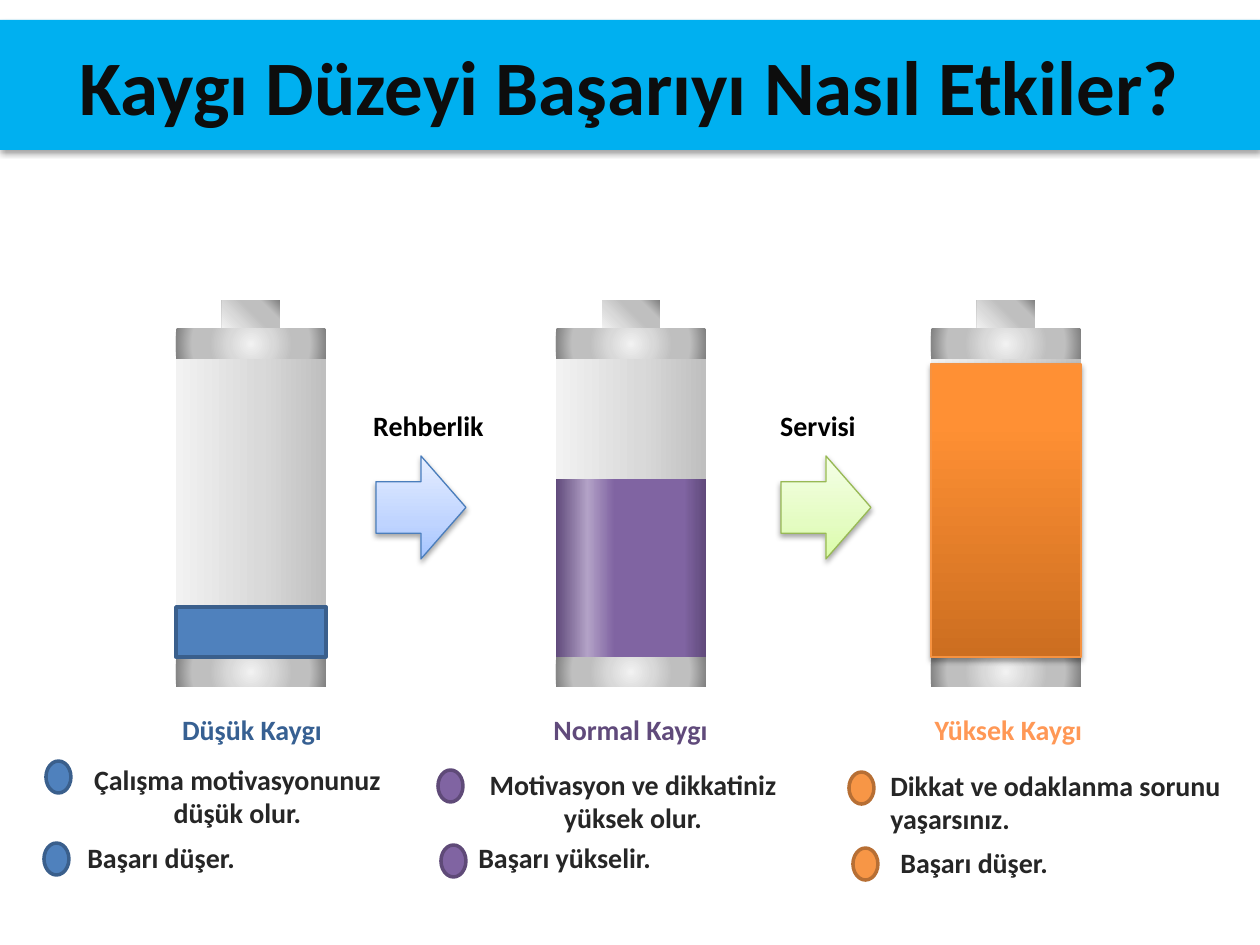
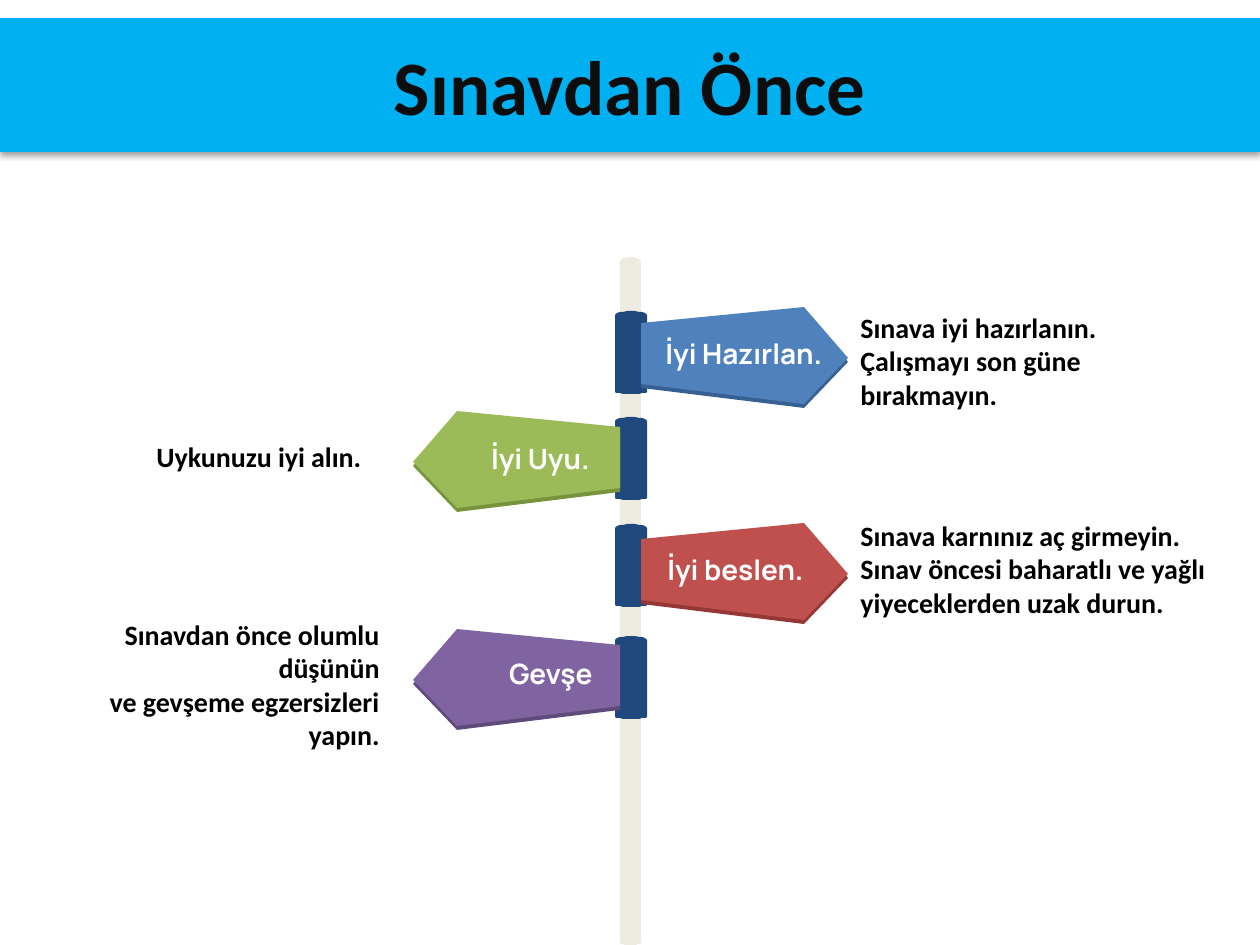
import math

from lxml import etree
from pptx import Presentation
from pptx.dml.color import RGBColor
from pptx.enum.shapes import MSO_SHAPE
from pptx.enum.text import MSO_ANCHOR, MSO_AUTO_SIZE, PP_ALIGN
from pptx.oxml.ns import qn
from pptx.util import Pt

PX = 914400 / 126
RECTANGLE, ELLIPSE, ARROW = MSO_SHAPE.RECTANGLE, MSO_SHAPE.OVAL, MSO_SHAPE.RIGHT_ARROW
LEFT, CENTER, RIGHT = PP_ALIGN.LEFT, PP_ALIGN.CENTER, PP_ALIGN.RIGHT

BAND = RGBColor(0x00, 0xB0, 0xF0)
TITLE_INK = RGBColor(0x0D, 0x0D, 0x0D)
NOTE_INK = RGBColor(0x26, 0x26, 0x26)
BLACK = RGBColor(0, 0, 0)
WHITE = RGBColor(0xFF, 0xFF, 0xFF)
BLUE = RGBColor(0x4F, 0x81, 0xBD)
BLUE_DARK = RGBColor(0x37, 0x60, 0x92)
BLUE_LINE = RGBColor(0x3A, 0x5F, 0x8C)
PURPLE = RGBColor(0x80, 0x64, 0xA2)
PURPLE_DARK = RGBColor(0x60, 0x4A, 0x7B)
PURPLE_LINE = RGBColor(0x5F, 0x4A, 0x78)
ORANGE = RGBColor(0xF7, 0x96, 0x46)
ORANGE_TEXT = RGBColor(0xFF, 0x98, 0x56)
ORANGE_LINE = RGBColor(0xB7, 0x6F, 0x34)
ORANGE_EDGE = RGBColor(0xF6, 0x92, 0x40)
GREEN = RGBColor(0x9B, 0xBB, 0x59)
GREEN_DARK = RGBColor(0x77, 0x93, 0x3C)
RED = RGBColor(0xC0, 0x50, 0x4D)
RED_DARK = RGBColor(0x95, 0x37, 0x35)
ARROW_BLUE_LINE = RGBColor(0x4B, 0x7E, 0xBC)
ARROW_GREEN_LINE = RGBColor(0x98, 0xB9, 0x55)
POST = RGBColor(0xEE, 0xEC, 0xE1)
SLEEVE = RGBColor(0x1F, 0x49, 0x7D)

# A gradient is its stops, then an angle in degrees or the focus of a circle (l, t, r, b).
METAL_STOPS = [(0, "F2F2F2"), (29, "D9D9D9"), (55, "BFBFBF"), (77, "BFBFBF"), (100, "808080")]
METAL = (METAL_STOPS, (50, 50, 50, 50))
METAL_KNOB = (METAL_STOPS, (0, 100, 100, 0))
GLASS = ([(0, "F2F2F2"), (57, "D9D9D9"), (100, "BFBFBF")], 0)
PURPLE_CHARGE = ([(0, "604A7B"), (21, "B3A2C7"), (39, "8064A2"), (85, "8064A2"),
                  (100, "604A7B")], 0)
ORANGE_CHARGE = ([(0, "CC6E20"), (80, "FF9034"), (100, "FF9136")], 270)
ARROW_BLUE = ([(0, "A4C4FF"), (35, "BFD4FF"), (100, "E6EEFF")], 270)
ARROW_GREEN = ([(0, "DAFDA7"), (35, "E4FCC2"), (100, "F5FFE7")], 270)

ANXIETY_TITLE = ("Kaygı Düzeyi Başarıyı Nasıl Etkiler?", 20, 130)
# Notes: text, box (left, top, width, height), alignment, bullet position.
LEVELS = [
    dict(name="Düşük Kaygı", name_box=(168, 706, 168, 47), ink=BLUE_DARK, left=176,
         charge_top=607, charge=BLUE, edge=(BLUE_LINE, 2), shadow=False,
         bullet=(BLUE, BLUE_LINE),
         notes=[("Çalışma motivasyonunuz düşük olur.", (68, 756, 339, 81), CENTER, (46, 761)),
                ("Başarı düşer.", (75, 834, 339, 47), LEFT, (44, 843))]),
    dict(name="Normal Kaygı", name_box=(540, 706, 181, 47), ink=PURPLE_DARK, left=556,
         charge_top=479, charge=PURPLE_CHARGE, edge=None, shadow=False,
         bullet=(PURPLE, PURPLE_LINE),
         notes=[("Motivasyon ve dikkatiniz yüksek olur.", (447, 761, 372, 81), CENTER, (438, 770)),
                ("Başarı yükselir.", (466, 834, 339, 47), LEFT, (441, 845))]),
    dict(name="Yüksek Kaygı", name_box=(921, 706, 175, 47), ink=ORANGE_TEXT, left=931,
         charge_top=364, charge=ORANGE_CHARGE, edge=(ORANGE_EDGE, 0.75), shadow=True,
         bullet=(ORANGE, ORANGE_LINE),
         notes=[("Dikkat ve odaklanma sorunu yaşarsınız.", (878, 762, 365, 81), LEFT, (849, 772)),
                ("Başarı düşer.", (888, 839, 372, 47), LEFT, (853, 848))]),
]
ARROWS = [("Rehberlik", (360, 402, 137, 47), 376, ARROW_BLUE, ARROW_BLUE_LINE),
          ("Servisi", (767, 402, 102, 47), 781, ARROW_GREEN, ARROW_GREEN_LINE)]

EXAM_TITLE = ("Sınavdan Önce", 18, 134)
# Sign: label, label box, points left, top, face, edge, sleeve top.
SIGNS = [
    ("İyi Hazırlan.", (653, 330, 183, 47), False, 307, BLUE, BLUE_DARK, 311),
    ("İyi Uyu.", (476, 435, 126, 47), True, 411, GREEN, GREEN_DARK, 417),
    ("İyi beslen.", (655, 546, 163, 47), False, 523, RED, RED_DARK, 524),
    ("Gevşe", (494, 650, 111, 47), True, 629, PURPLE, PURPLE_DARK, 636),
]
# Advice: paragraphs, box, alignment, wrapping.
ADVICE = [
    (["Sınava iyi hazırlanın. Çalışmayı son güne bırakmayın."], (848, 304, 373, 115), LEFT, True),
    (["Uykunuzu iyi alın."], (144, 433, 233, 47), LEFT, False),
    (["Sınava karnınız aç girmeyin.", "Sınav öncesi baharatlı ve yağlı",
      "yiyeceklerden uzak durun."], (848, 512, 412, 115), LEFT, True),
    (["Sınavdan önce olumlu düşünün", "ve gevşeme egzersizleri yapın."],
     (25, 611, 367, 149), RIGHT, True),
]
SIGN_FACE = [(804, 0), (641, 16), (641, 77), (804, 97), (848, 51)]
MIRROR = 1261
EDGE_DEPTH = 4


def emu(*lengths):
    return [round(length * PX) for length in lengths]


def set_gradient(shape, stops, direction):
    shape.fill.solid()
    solid = shape.fill._xPr.find(qn("a:solidFill"))
    gradient = etree.Element(qn("a:gradFill"), rotWithShape="1")
    stop_list = etree.SubElement(gradient, qn("a:gsLst"))
    for position, color in stops:
        stop = etree.SubElement(stop_list, qn("a:gs"), pos=str(position * 1000))
        etree.SubElement(stop, qn("a:srgbClr"), val=color)
    if isinstance(direction, tuple):
        circle = etree.SubElement(gradient, qn("a:path"))
        circle.set("path", "circle")
        focus = {side: str(value * 1000) for side, value in zip("ltrb", direction)}
        etree.SubElement(circle, qn("a:fillToRect"), focus)
    else:
        etree.SubElement(gradient, qn("a:lin"), ang=str(direction * 60000), scaled="0")
    solid.getparent().replace(solid, gradient)


def style(shape, fill, edge=None, shadow=False):
    """Set fill (colour or gradient), edge (colour, points) and the soft shadow below."""
    if isinstance(fill, RGBColor):
        shape.fill.solid()
        shape.fill.fore_color.rgb = fill
    else:
        set_gradient(shape, *fill)
    if edge:
        shape.line.color.rgb = edge[0]
        shape.line.width = Pt(edge[1])
    else:
        shape.line.fill.background()
    shape.shadow.inherit = False
    if shadow:
        effects = shape._element.spPr.find(qn("a:effectLst"))
        outer = etree.SubElement(effects, qn("a:outerShdw"), blurRad="40000", dist="23000",
                                 dir="5400000", rotWithShape="0")
        color = etree.SubElement(outer, qn("a:srgbClr"), val="000000")
        etree.SubElement(color, qn("a:alpha"), val="35000")


def add_part(slide, kind, box, fill, edge=None, shadow=False):
    style(slide.shapes.add_shape(kind, *emu(*box)), fill, edge, shadow)


def add_outline(slide, points, fill):
    builder = slide.shapes.build_freeform(*points[0], scale=PX)
    builder.add_line_segments(points[1:], close=True)
    style(builder.convert_to_shape(), fill)


def set_font(paragraph, size, color, name="Calibri"):
    font = paragraph.font
    font.name, font.size, font.bold = name, Pt(size), True
    font.color.rgb = color


def add_text(slide, lines, box, color, align=LEFT, wrap=True, font="Calibri"):
    frame = slide.shapes.add_textbox(*emu(*box)).text_frame
    frame.word_wrap = wrap
    frame.text = "\n".join(lines)
    for paragraph in frame.paragraphs:
        paragraph.alignment = align
        set_font(paragraph, 16, color, font)


def add_titled_slide(presentation, text, top, height):
    slide = presentation.slides.add_slide(presentation.slide_layouts[5])
    title = slide.shapes.title
    title.left, title.top, title.width, title.height = emu(0, top, 1260, height)
    style(title, BAND, shadow=True)
    frame = title.text_frame
    frame.text = text
    frame.auto_size = MSO_AUTO_SIZE.NONE
    frame.vertical_anchor = MSO_ANCHOR.MIDDLE
    frame.paragraphs[0].alignment = CENTER
    set_font(frame.paragraphs[0], 44, TITLE_INK)
    return slide


def add_battery(slide, level):
    left, top, bottom = level["left"], 329, 687
    cap, width = 30, 150
    add_part(slide, RECTANGLE, (left, top, width, bottom - top), GLASS)
    add_part(slide, RECTANGLE, (left + 46, top - 29, 58, 29), METAL_KNOB)
    for cap_top in (top, bottom - cap):
        add_part(slide, RECTANGLE, (left, cap_top, width, cap), METAL)
    charge_top = level["charge_top"]
    add_part(slide, RECTANGLE, (left, charge_top, width, bottom - cap - charge_top),
             level["charge"], level["edge"], level["shadow"])


def build_anxiety_slide(presentation):
    slide = add_titled_slide(presentation, *ANXIETY_TITLE)
    for level in LEVELS:
        add_battery(slide, level)
        add_text(slide, [level["name"]], level["name_box"], level["ink"], CENTER, wrap=False)
        fill, line = level["bullet"]
        for text, box, align, bullet_at in level["notes"]:
            add_part(slide, ELLIPSE, (*bullet_at, 25, 32), fill, (line, 2))
            add_text(slide, [text], box, NOTE_INK, align)
    for text, box, left, fill, line in ARROWS:
        add_part(slide, ARROW, (left, 456, 90, 103), fill, (line, 0.75), shadow=True)
        add_text(slide, [text], box, BLACK, CENTER, wrap=False)


def add_column(slide, left, right, top, bottom, top_bulge, bottom_bulge, fill):
    """Draw an upright column whose two ends are shallow arcs."""
    middle, radius = (left + right) / 2, (right - left) / 2
    angles = [math.pi * step / 12 for step in range(13)]
    upper = [(middle - radius * math.cos(a), top + top_bulge * (1 - math.sin(a)))
             for a in angles]
    lower = [(middle + radius * math.cos(a), bottom - bottom_bulge * (1 - math.sin(a)))
             for a in angles]
    add_outline(slide, upper + lower, fill)


def build_exam_slide(presentation):
    slide = add_titled_slide(presentation, *EXAM_TITLE)
    add_column(slide, 620, 641, 257, 945, 5, 3, POST)
    for label, box, points_left, top, face, edge, sleeve_top in SIGNS:
        add_column(slide, 615, 647, sleeve_top, sleeve_top + 83, 4, 2, SLEEVE)
        for color, drop in ((edge, EDGE_DEPTH), (face, 0)):
            points = [(MIRROR - x if points_left else x, top + y + drop) for x, y in SIGN_FACE]
            add_outline(slide, points, color)
        add_text(slide, [label], box, WHITE, RIGHT if points_left else LEFT,
                 wrap=False, font="Manrope")
    for lines, box, align, wrap in ADVICE:
        add_text(slide, lines, box, BLACK, align, wrap)


def main():
    presentation = Presentation()
    presentation.slide_width, presentation.slide_height = emu(1260, 945)
    build_anxiety_slide(presentation)
    build_exam_slide(presentation)
    presentation.save("out.pptx")


if __name__ == "__main__":
    main()
